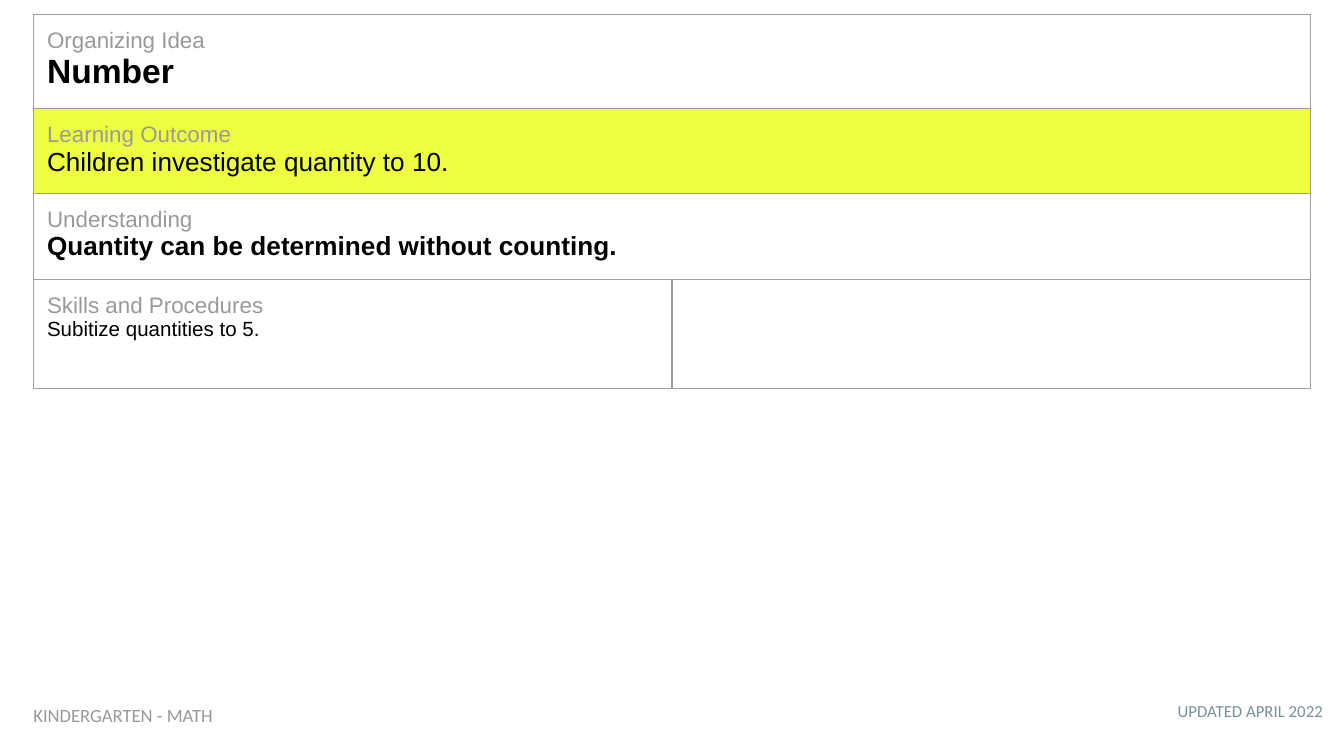
from lxml.etree import SubElement
from pptx import Presentation
from pptx.dml.color import RGBColor
from pptx.enum.text import PP_ALIGN
from pptx.oxml.ns import qn
from pptx.util import Inches, Pt

COLORS = {"label": "999999", "text": "000000", "highlight": "EEFF41",
          "border": "9E9E9E", "date": "78909C"}
MARGINS = ("margin_left", "margin_top", "margin_right", "margin_bottom")

# height, fill, label, statement, same paragraph, statement format
ROWS = [
    (0.7, None, "Organizing Idea", "Number", True,
     {"size": Pt(18), "bold": True}),
    (0.63, "highlight", "Learning Outcome", "Children investigate quantity to 10.", True,
     {"size": Pt(14), "bold": False}),
    (0.64, None, "Understanding", "Quantity can be determined without counting.", False,
     {"size": Pt(14), "bold": True}),
    (0.81, None, "Skills and Procedures", "Subitize quantities to 5.", False,
     {"size": Pt(11), "bold": False}),
]
# left, top, width, height, text, size, color, alignment
FOOTERS = [
    (7.24, 5.14, 2.7, 0.35, "UPDATED APRIL 2022", 9, "date", PP_ALIGN.RIGHT),
    (0.15, 5.15, 3.01, 0.37, "KINDERGARTEN - MATH", 10, "label", PP_ALIGN.LEFT),
]


def add_run(p, text, color, **formats):
    r = p.add_run()
    r.text = text
    r.font.color.rgb = RGBColor.from_string(COLORS[color])
    for name, value in formats.items():
        setattr(r.font, name, value)


def style_cell(cell, fill):
    """Set the margins, the four borders and the fill of a table cell."""
    for name in MARGINS:
        setattr(cell, name, Inches(0.1))
    tcPr = cell._tc.get_or_add_tcPr()
    for side in ("a:lnL", "a:lnR", "a:lnT", "a:lnB"):
        ln = SubElement(tcPr, qn(side), w=str(Pt(0.75)))
        solid = SubElement(ln, qn("a:solidFill"))
        SubElement(solid, qn("a:srgbClr"), val=COLORS["border"])
    if fill:
        cell.fill.solid()
        cell.fill.fore_color.rgb = RGBColor.from_string(COLORS[fill])
    else:
        cell.fill.background()


prs = Presentation()
prs.slide_width = Inches(10)
prs.slide_height = prs.slide_width * 9 // 16
s = prs.slides.add_slide(prs.slide_layouts[6])

# Curriculum table
height = sum(row[0] for row in ROWS)
table = s.shapes.add_table(len(ROWS), 2, Inches(0.25), Inches(0.11),
                           Inches(9.5), Inches(height)).table
table.first_row = table.horz_banding = False
for i, (row_height, fill, label, statement, same_paragraph, formats) in enumerate(ROWS):
    table.rows[i].height = Inches(row_height)
    for cell in table.rows[i].cells:
        style_cell(cell, fill)
    first = table.cell(i, 0)
    if i < len(ROWS) - 1:
        first.merge(table.cell(i, 1))
    tf = first.text_frame
    p = tf.paragraphs[0]
    add_run(p, label, "label", name="Arial", size=Pt(12), bold=False)
    if same_paragraph:
        p.add_line_break()
    else:
        p = tf.add_paragraph()
    add_run(p, statement, "text", name="Arial", **formats)

# Footers
for left, top, width, box_height, text, size, color, align in FOOTERS:
    sp = s.shapes.add_textbox(Inches(left), Inches(top), Inches(width), Inches(box_height))
    tf = sp.text_frame
    tf.word_wrap = True
    for name in MARGINS:
        setattr(tf, name, Inches(0.1))
    p = tf.paragraphs[0]
    p.alignment = align
    add_run(p, text, color, name="Calibri", size=Pt(size))

prs.save("out.pptx")
